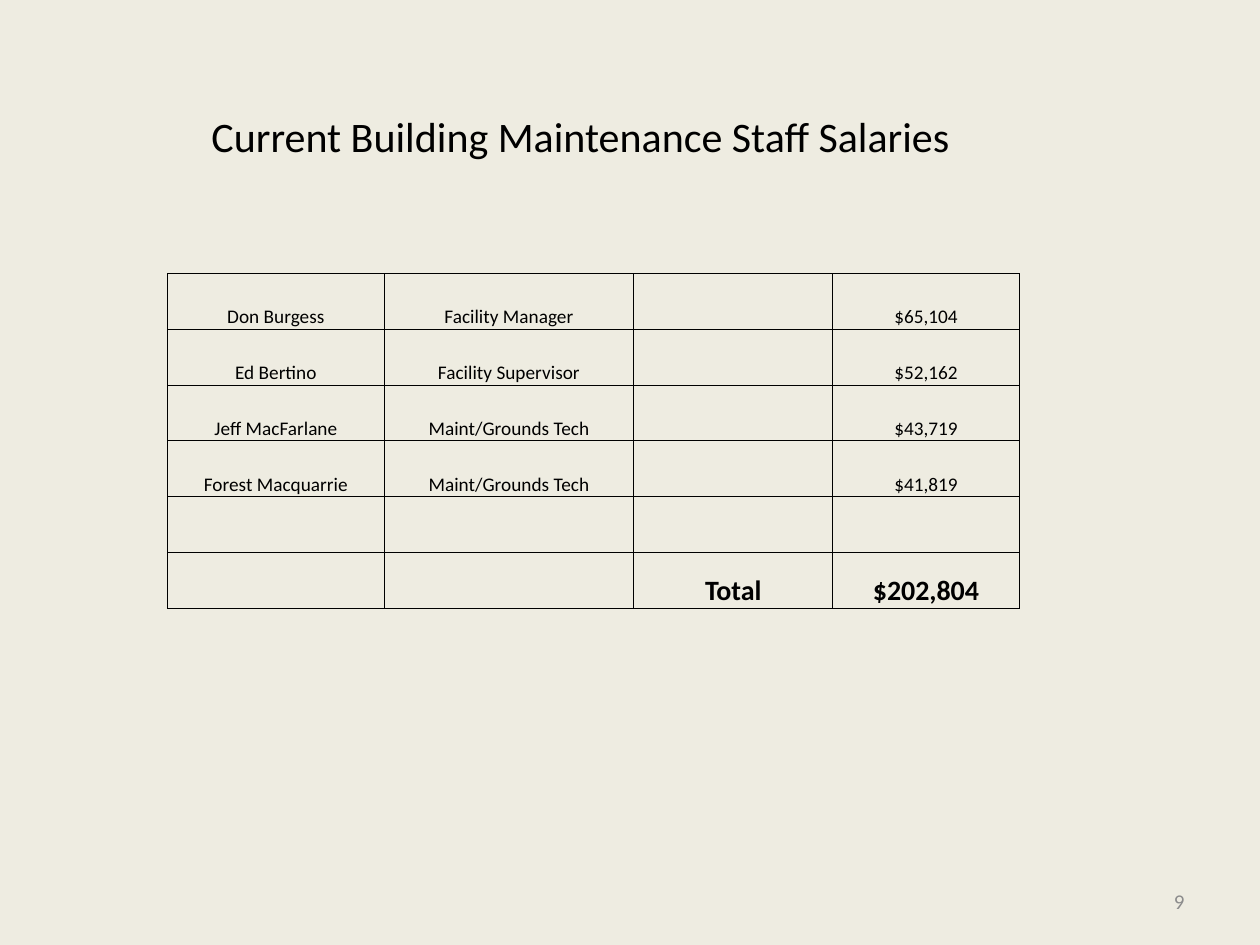
"""Build the slide of building maintenance staff salaries."""
from lxml import etree
from pptx import Presentation
from pptx import util as u
from pptx.dml.color import RGBColor
from pptx.enum import text
from pptx.oxml import ns

COLORS = {"background": "EEECE1", "ink": "000000", "number": "8C8C8C"}
TITLE = "Current Building Maintenance Staff Salaries"
PAGE = "9"
SALARIES = [
    ("Don Burgess", "Facility Manager", "", "$65,104"),
    ("Ed Bertino", "Facility Supervisor", "", "$52,162"),
    ("Jeff MacFarlane", "Maint/Grounds Tech", "", "$43,719"),
    ("Forest Macquarrie", "Maint/Grounds Tech", "", "$41,819"),
    ("", "", "", ""),
    ("", "", "Total", "$202,804"),
]
COLUMNS = [1.72, 1.98, 1.58, 1.48]
ROW = 0.443
BODY = {"size": u.Pt(11), "bold": False}
TOTAL = {"size": u.Pt(16), "bold": True}
CELL = {
    "vertical_anchor": text.MSO_ANCHOR.BOTTOM,
    "margin_left": u.Inches(0.01),
    "margin_right": u.Inches(0.01),
    "margin_top": u.Inches(0.01),
    "margin_bottom": 0,
}


def apply(target, values):
    for name, value in values.items():
        setattr(target, name, value)


def write(paragraph, words, align, color, font):
    paragraph.alignment = align
    run = paragraph.add_run()
    run.text = words
    apply(run.font, {"name": "Calibri", **font})
    run.font.color.rgb = RGBColor.from_string(COLORS[color])


def add_label(slide, box, words, align, color, size, anchor):
    frame = slide.shapes.add_textbox(*map(u.Inches, box)).text_frame
    apply(frame, {"word_wrap": True, "vertical_anchor": anchor})
    write(frame.paragraphs[0], words, align, color, {"size": u.Pt(size)})


def add_borders(cell):
    properties = cell._tc.get_or_add_tcPr()
    for side in ("lnL", "lnR", "lnT", "lnB"):
        line = etree.SubElement(properties, ns.qn(f"a:{side}"), w=str(u.Pt(0.5)))
        fill = etree.SubElement(line, ns.qn("a:solidFill"))
        etree.SubElement(fill, ns.qn("a:srgbClr"), val=COLORS["ink"])


def add_salaries(slide):
    box = map(u.Inches, (1.33, 2.17, sum(COLUMNS), ROW * len(SALARIES)))
    table = slide.shapes.add_table(len(SALARIES), len(COLUMNS), *box).table
    apply(table, {"first_row": False, "horz_banding": False})
    for column, width in zip(table.columns, COLUMNS):
        column.width = u.Inches(width)
    for r, entries in enumerate(SALARIES):
        table.rows[r].height = u.Inches(ROW)
        for c, entry in enumerate(entries):
            cell = table.cell(r, c)
            apply(cell, CELL)
            add_borders(cell)
            cell.fill.background()
            if entry:
                font = TOTAL if "Total" in entries else BODY
                write(cell.text_frame.paragraphs[0], entry,
                      text.PP_ALIGN.CENTER, "ink", font)


def main():
    deck = Presentation()
    apply(deck, {"slide_width": u.Inches(10), "slide_height": u.Inches(7.5)})
    slide = deck.slides.add_slide(deck.slide_layouts[6])
    slide.background.fill.solid()
    slide.background.fill.fore_color.rgb = RGBColor.from_string(COLORS["background"])
    add_label(slide, (1.58, 0.83, 7.92, 0.5), TITLE,
              text.PP_ALIGN.LEFT, "ink", 24, text.MSO_ANCHOR.TOP)
    add_salaries(slide)
    add_label(slide, (7.17, 6.95, 2.33, 0.4), PAGE,
              text.PP_ALIGN.RIGHT, "number", 12, text.MSO_ANCHOR.MIDDLE)
    deck.save("out.pptx")


if __name__ == "__main__":
    main()
